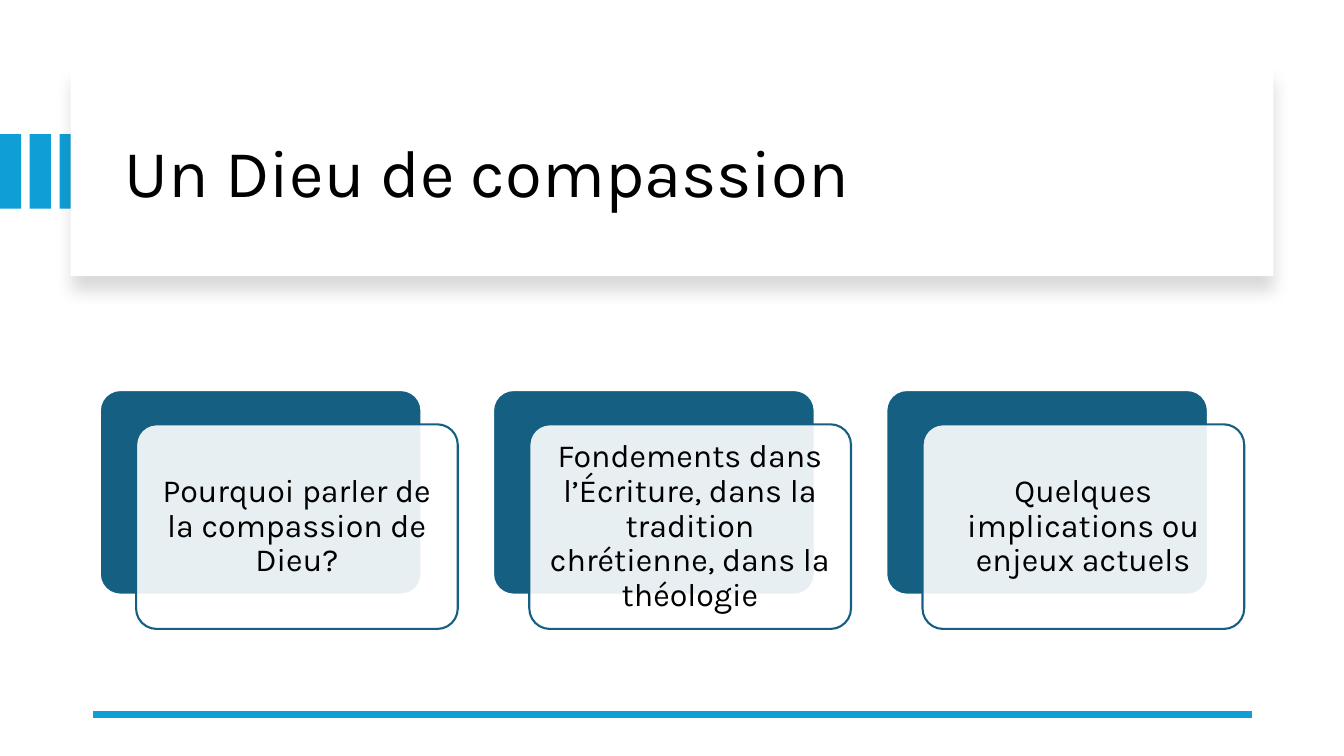
from lxml.etree import SubElement
from pptx import Presentation
from pptx.dml.color import RGBColor
from pptx.enum.shapes import MSO_CONNECTOR, MSO_SHAPE
from pptx.enum.text import MSO_ANCHOR, PP_ALIGN
from pptx.oxml.ns import qn
from pptx.util import Inches, Pt

THEME = {
    "accent": RGBColor(0x0F, 0x9E, 0xD5),
    "dark": RGBColor(0x15, 0x60, 0x82),
    "white": RGBColor(0xFF, 0xFF, 0xFF),
    "black": RGBColor(0, 0, 0),
    "font": "Karla",
    "title_size": Pt(48),
    "card_size": Pt(23),
}
TOPICS = [
    "Pourquoi parler de la compassion de Dieu?",
    "Fondements dans l’Écriture, dans la tradition chrétienne, dans la théologie",
    "Quelques implications ou enjeux actuels",
]


def add_block(page, kind, left, top, width, height, fill, line=None):
    block = page.shapes.add_shape(
        kind, Inches(left), Inches(top), Inches(width), Inches(height))
    block.shadow.inherit = False
    block.fill.solid()
    block.fill.fore_color.rgb = THEME[fill]
    if line:
        block.line.color.rgb = THEME[line]
        block.line.width = Pt(1.5)
    else:
        block.line.fill.background()
    return block


def write_text(box, text, size, align, margins):
    frame = box.text_frame
    frame_format = {"word_wrap": True, "vertical_anchor": MSO_ANCHOR.MIDDLE, **margins}
    for name, value in frame_format.items():
        setattr(frame, name, value)
    para = frame.paragraphs[0]
    para.alignment = align
    para.line_spacing = 0.9
    span = para.add_run()
    span.text = text
    for name, value in {"name": THEME["font"], "size": THEME[size]}.items():
        setattr(span.font, name, value)
    span.font.color.rgb = THEME["black"]


deck = Presentation()
deck.slide_width, deck.slide_height = Inches(13.33), Inches(7.5)
page = deck.slides.add_slide(deck.slide_layouts[6])

# Three bars at the left edge
BAR_STEP = 0.295
for column in range(3):
    add_block(page, MSO_SHAPE.RECTANGLE, column * BAR_STEP, 1.33, 0.21, 0.74, "accent")

# Title panel with a soft shadow below
panel = add_block(page, MSO_SHAPE.RECTANGLE, 0.7, 0.67, 11.93, 2.07, "white")
effects = panel._element.spPr.find(qn("a:effectLst"))
shadow = SubElement(effects, qn("a:outerShdw"), blurRad=str(Pt(11)),
                    dist=str(Pt(10)), dir="5400000", algn="t", rotWithShape="0")
shade = SubElement(shadow, qn("a:srgbClr"), val=str(THEME["black"]))
SubElement(shade, qn("a:alpha"), val="15000")

title = page.shapes.add_textbox(Inches(1.14), Inches(0.89), Inches(11.13), Inches(1.7))
write_text(title, "Un Dieu de compassion", "title_size", PP_ALIGN.LEFT, {})

# Rule at the foot
rule = page.shapes.add_connector(
    MSO_CONNECTOR.STRAIGHT, Inches(12.42), Inches(7.09), Inches(0.92), Inches(7.09))
rule.line.color.rgb = THEME["accent"]
rule.line.width = Pt(4.5)
SubElement(rule._element.spPr, qn("a:effectLst"))

# Topic cards: a dark back and a translucent front, offset down and right
CARD_LEFT, CARD_TOP, CARD_STEP = 0.99, 3.87, 3.9
CARD_WIDTH, CARD_HEIGHT = 3.19, 2.03
SHIFT_X, SHIFT_Y = 0.36, 0.34
CARD_MARGINS = {f"margin_{side}": Inches(0.1) for side in ("left", "top", "right", "bottom")}
for column, topic in enumerate(TOPICS):
    left = CARD_LEFT + column * CARD_STEP
    back = add_block(page, MSO_SHAPE.ROUNDED_RECTANGLE, left, CARD_TOP,
                     CARD_WIDTH, CARD_HEIGHT, "dark", "white")
    front = add_block(page, MSO_SHAPE.ROUNDED_RECTANGLE, left + SHIFT_X, CARD_TOP + SHIFT_Y,
                      CARD_WIDTH, CARD_HEIGHT, "white", "dark")
    for card in (back, front):
        card.adjustments[0] = 0.1
    tint = front._element.spPr.find(qn("a:solidFill")).find(qn("a:srgbClr"))
    SubElement(tint, qn("a:alpha"), val="90000")
    write_text(front, topic, "card_size", PP_ALIGN.CENTER, CARD_MARGINS)

deck.save("out.pptx")
